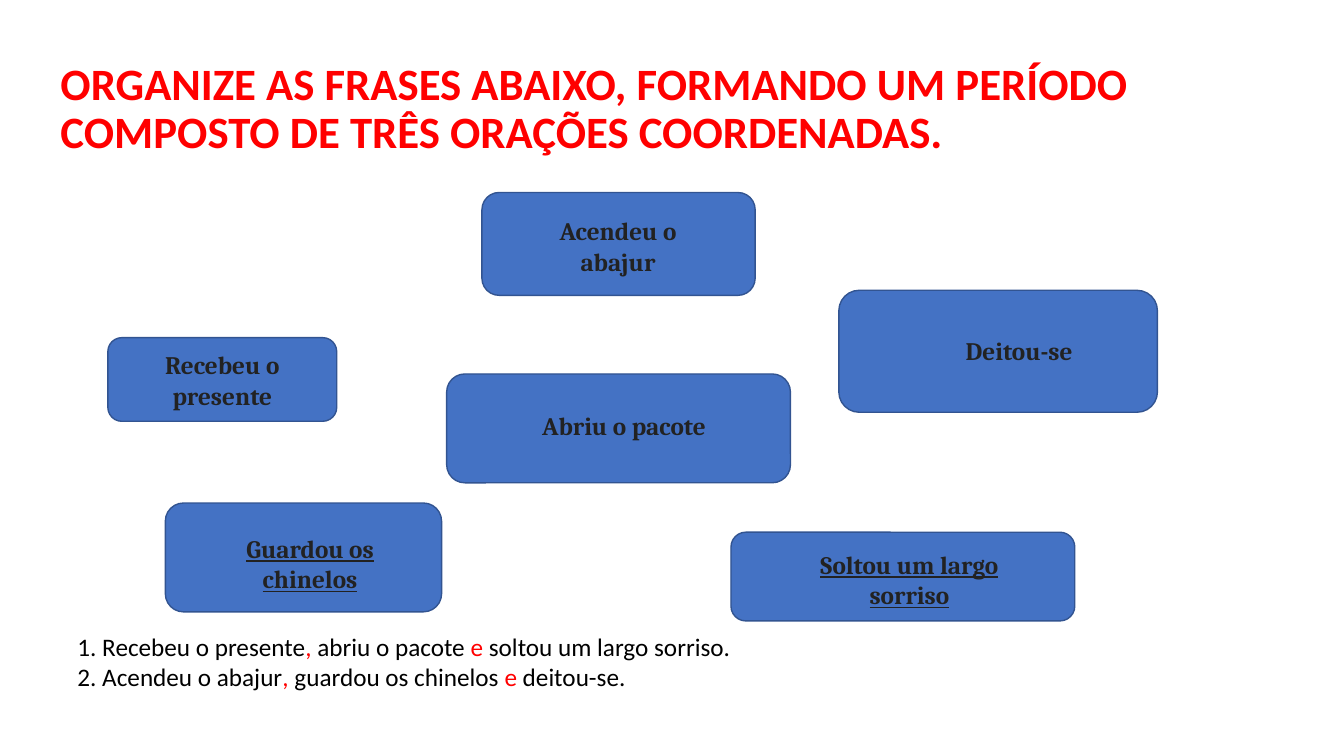
"""Build a slide of phrase cards to be joined into coordinated sentences."""
from dataclasses import dataclass

from pptx import Presentation
from pptx.dml.color import RGBColor
from pptx.enum.shapes import MSO_SHAPE
from pptx.enum.text import MSO_ANCHOR, MSO_AUTO_SIZE, PP_ALIGN
from pptx.util import Inches, Pt

ROUNDED = MSO_SHAPE.ROUNDED_RECTANGLE
LEFT, CENTER = PP_ALIGN.LEFT, PP_ALIGN.CENTER
TOP, MIDDLE = MSO_ANCHOR.TOP, MSO_ANCHOR.MIDDLE
NO_AUTOFIT = MSO_AUTO_SIZE.NONE
TITLE_ONLY_LAYOUT = 5


@dataclass(frozen=True)
class Theme:
    accent: RGBColor = RGBColor(0xFF, 0x00, 0x00)
    card_fill: RGBColor = RGBColor(0x44, 0x72, 0xC4)
    card_line: RGBColor = RGBColor(0x32, 0x54, 0x91)
    card_text: RGBColor = RGBColor(0x22, 0x22, 0x22)
    body_text: RGBColor = RGBColor(0x00, 0x00, 0x00)
    main_font: str = "Calibri"
    card_font: str = "Cambria"
    title_size: int = 32
    body_size: int = 18


@dataclass(frozen=True)
class Box:
    left: float
    top: float
    width: float
    height: float

    def lengths(self) -> tuple:
        return tuple(Inches(side) for side in (self.left, self.top, self.width, self.height))


@dataclass(frozen=True)
class PhraseCard:
    phrase: str
    card: Box
    label: Box
    align: PP_ALIGN = CENTER
    underline: bool = False


THEME = Theme()
TITLE = "ORGANIZE AS FRASES ABAIXO, FORMANDO UM PERÍODO COMPOSTO DE TRÊS ORAÇÕES COORDENADAS."
TITLE_BOX = Box(0.5, 0.5, 12.48, 1.18)
ANSWERS_BOX = Box(0.67, 6.21, 8.86, 0.71)
PHRASE_CARDS = (
    PhraseCard("Recebeu o presente", Box(1.07, 3.35, 2.27, 0.83), Box(1.26, 3.42, 1.89, 0.71)),
    PhraseCard("Deitou-se", Box(8.32, 2.88, 3.16, 1.21), Box(9.48, 3.28, 2, 0.4), align=LEFT),
    PhraseCard("Abriu o pacote", Box(4.43, 3.71, 3.41, 1.08), Box(5.28, 4.02, 2.47, 0.4), align=LEFT),
    PhraseCard("Guardou os chinelos", Box(1.64, 4.99, 2.74, 1.08), Box(2.23, 5.24, 1.69, 0.71), underline=True),
    PhraseCard("Soltou um largo sorriso", Box(7.25, 5.28, 3.41, 0.88), Box(7.95, 5.4, 2.14, 0.71), underline=True),
    PhraseCard("Acendeu o abajur", Box(4.78, 1.91, 2.71, 1.02), Box(5.26, 2.09, 1.74, 0.71)),
)
ANSWERS = (
    ("1. Recebeu o presente", ", ", "abriu o pacote ", "e", " soltou um largo sorriso."),
    ("2. Acendeu o abajur", ", ", "guardou os chinelos ", "e", " deitou-se."),
)


def add_run(paragraph, text: str, *, color: RGBColor, font: str = THEME.main_font,
            size: int = THEME.body_size, bold: bool = False, underline: bool = False) -> None:
    run = paragraph.add_run()
    run.text = text
    run.font.name = font
    run.font.size = Pt(size)
    run.font.bold = bold
    run.font.underline = underline
    run.font.color.rgb = color


def add_text_box(slide, box: Box):
    frame = slide.shapes.add_textbox(*box.lengths()).text_frame
    frame.word_wrap = True
    frame.vertical_anchor = TOP
    return frame


def format_title(slide) -> None:
    title = slide.shapes.title
    title.left, title.top, title.width, title.height = TITLE_BOX.lengths()
    frame = title.text_frame
    frame.word_wrap = True
    frame.auto_size = NO_AUTOFIT
    frame.vertical_anchor = MIDDLE
    paragraph = frame.paragraphs[0]
    paragraph.alignment = LEFT
    paragraph.line_spacing = 0.9
    add_run(paragraph, TITLE, color=THEME.accent, size=THEME.title_size, bold=True)


def draw_card(slide, item: PhraseCard) -> None:
    shape = slide.shapes.add_shape(ROUNDED, *item.card.lengths())
    shape.shadow.inherit = False
    shape.fill.solid()
    shape.fill.fore_color.rgb = THEME.card_fill
    shape.line.color.rgb = THEME.card_line
    shape.line.width = Pt(1)


def draw_label(slide, item: PhraseCard) -> None:
    paragraph = add_text_box(slide, item.label).paragraphs[0]
    paragraph.alignment = item.align
    add_run(paragraph, item.phrase, color=THEME.card_text, font=THEME.card_font,
            bold=True, underline=item.underline)


def draw_answers(slide) -> None:
    frame = add_text_box(slide, ANSWERS_BOX)
    for row, parts in enumerate(ANSWERS):
        paragraph = frame.add_paragraph() if row else frame.paragraphs[0]
        for index, part in enumerate(parts):
            add_run(paragraph, part, color=THEME.accent if index % 2 else THEME.body_text)


def main() -> None:
    presentation = Presentation()
    presentation.slide_width = Inches(13.33)
    presentation.slide_height = Inches(7.5)
    slide = presentation.slides.add_slide(presentation.slide_layouts[TITLE_ONLY_LAYOUT])
    format_title(slide)
    for item in PHRASE_CARDS:
        draw_card(slide, item)
    for item in PHRASE_CARDS:
        draw_label(slide, item)
    draw_answers(slide)
    presentation.save("out.pptx")


if __name__ == "__main__":
    main()
